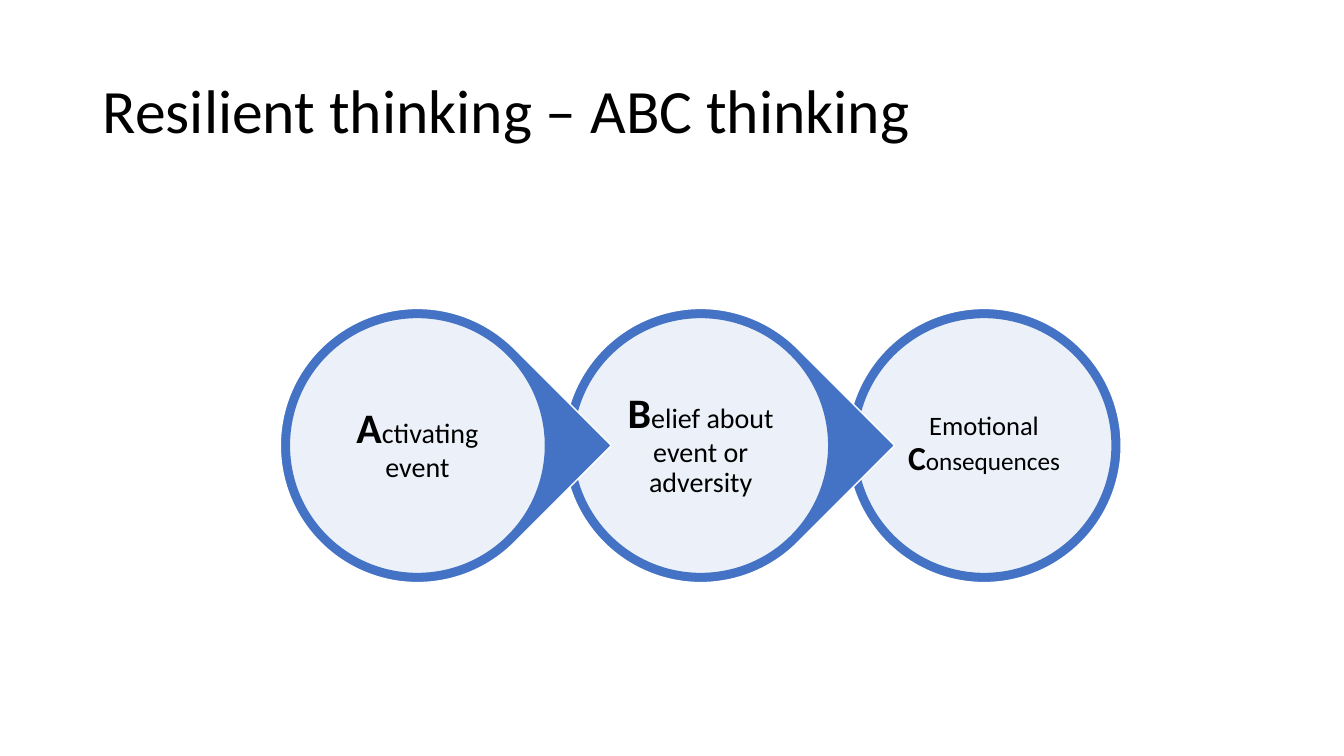
from lxml import etree
from pptx import Presentation
from pptx.dml.color import RGBColor
from pptx.enum.shapes import MSO_SHAPE as Shape
from pptx.enum.text import MSO_ANCHOR as Anchor, MSO_AUTO_SIZE as Fit, PP_ALIGN as Align
from pptx.oxml.ns import qn
from pptx.util import Inches, Pt

BLUE, WHITE, BLACK = "4472C4", "FFFFFF", "000000"
LEFT, TOP, STEP = 2.78, 3.06, 2.81
OUTER, RIM = 2.72, 0.09
INNER = OUTER - 2 * RIM


def color(code):
    return RGBColor.from_string(code)


def add_disc(kind, left, top, size, fill, line):
    disc = slide.shapes.add_shape(
        kind, Inches(left), Inches(top), Inches(size), Inches(size))
    disc.shadow.inherit = False
    disc.fill.solid()
    disc.fill.fore_color.rgb = color(fill)
    disc.line.color.rgb = color(line)
    disc.line.width = Pt(1)
    return disc


deck = Presentation()
deck.slide_width, deck.slide_height = Inches(13.33), Inches(7.5)
slide = deck.slides.add_slide(deck.slide_layouts[5])

title = slide.shapes.title
title.left, title.top = Inches(0.92), Inches(0.4)
title.width, title.height = Inches(11.5), Inches(1.45)
frame = title.text_frame
frame.text = "Resilient thinking – ABC thinking"
frame.auto_size = Fit.NONE
frame.vertical_anchor = Anchor.MIDDLE
head = frame.paragraphs[0]
head.alignment = Align.LEFT
head.line_spacing = 0.9
head.font.name = "Calibri"
head.font.size = Pt(44)
head.font.color.rgb = color(BLACK)

# Each run: text, size, bold
steps = [
    [("A", 30, True), ("ctivating event", 20, False)],
    [("B", 30, True), ("elief about event or adversity", 20, False)],
    [("Emotional ", 19, False), ("C", 24, True), ("onsequences", 18, False)],
]

# Drawn from right to left, so that each point lies over the next circle
for i, runs in reversed(list(enumerate(steps))):
    left = LEFT + i * STEP
    last = i == len(steps) - 1
    kind = Shape.OVAL if last else Shape.TEAR
    back = add_disc(kind, left, TOP, OUTER, BLUE, WHITE)
    back.rotation = 0 if last else 45

    face = add_disc(Shape.OVAL, left + RIM, TOP + RIM, INNER, WHITE, BLUE)
    tint = face.fill._xPr.find(qn("a:solidFill"))[0]
    etree.SubElement(tint, qn("a:alpha"), val="90000")

    frame = face.text_frame
    frame.word_wrap = True
    frame.vertical_anchor = Anchor.MIDDLE
    frame.margin_left = frame.margin_right = Inches(0.04)
    frame.margin_top = frame.margin_bottom = Inches(0.04)
    label = frame.paragraphs[0]
    label.alignment = Align.CENTER
    label.line_spacing = 0.9
    label.font.name = "Calibri"
    label.font.color.rgb = color(BLACK)
    for text, size, bold in runs:
        run = label.add_run()
        run.text = text
        run.font.size = Pt(size)
        run.font.bold = bold

deck.save("out.pptx")
